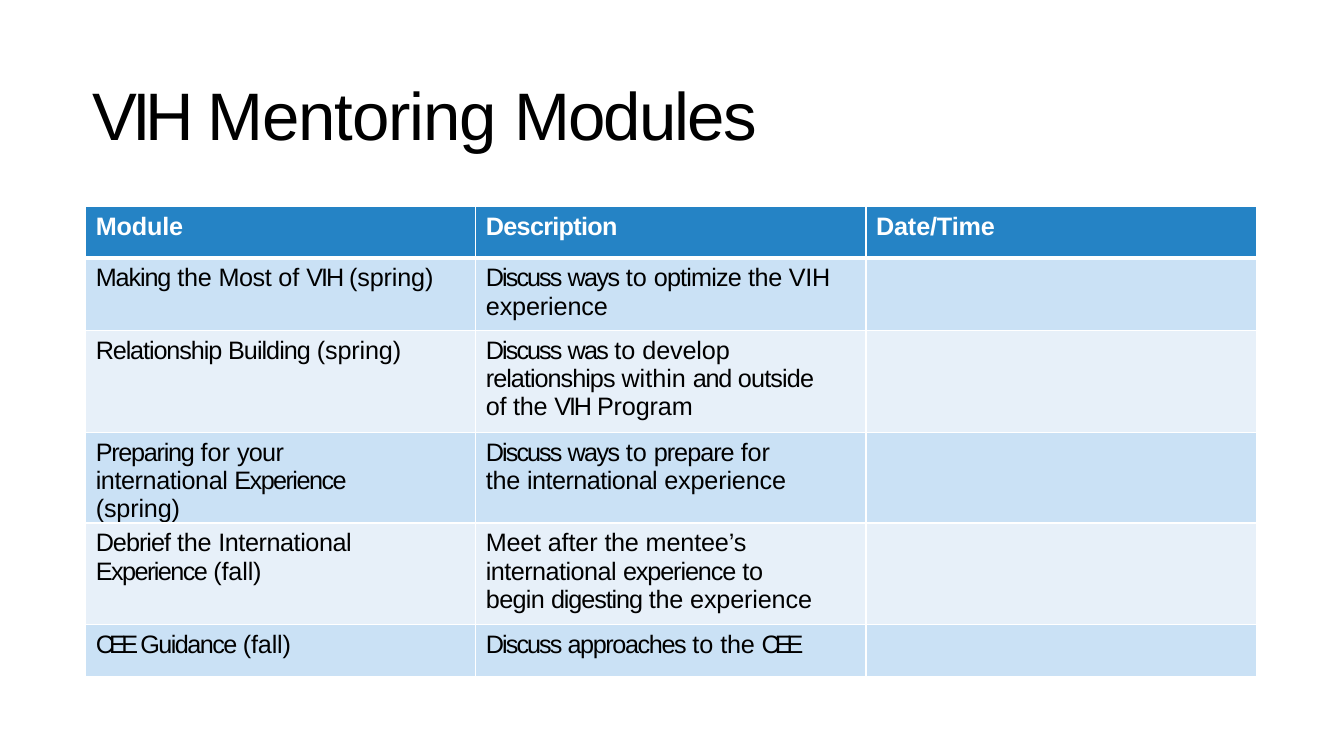
"""Build the mentoring modules slide: a title above a three-column table."""
from dataclasses import dataclass

from lxml import etree
from pptx import Presentation
from pptx import util as u
from pptx.dml.color import RGBColor
from pptx.enum import text as t
from pptx.oxml import ns

TITLE = [("VIH ", -3.7), ("Mentoring ", -0.9), ("Modules", -1.3)]
HEADINGS = [[("Module", -0.1)], [("Description", -0.5)], [("Date/Time", -0.1)]]
MODULES = [
    [[("Making ", -0.8), ("the ", -0.2), ("Most ", -0.3), ("of ", 0),
      ("VIH ", -1.5), ("(spring)", -0.1)],
     [("Discuss ", -1.4), ("ways ", -1.1), ("to ", 0), ("optimize ", -0.6),
      ("the VIH ", -0.2), ("experience", -0.1)], []],
    [[("Relationship ", -0.8), ("Building ", -0.7), ("(spring)", -0.1)],
     [("Discuss ", -1.4), ("was ", -1.2), ("to ", 0), ("develop ", -0.1),
      ("relationships ", -0.7), ("within ", 0), ("and ", -1), ("outside ", -0.6),
      ("of the ", -0.2), ("VIH ", -1.5), ("Program", -0.1)], []],
    [[("Preparing ", -0.9), ("for ", 0), ("your ", -0.5), ("international ", -0.3),
      ("Experience ", -1.1), ("(spring)", -0.1)],
     [("Discuss ", -1.4), ("ways ", -1.1), ("to ", 0), ("prepare ", -0.7),
      ("for ", 0), ("the ", -0.2), ("international ", -0.4),
      ("experience", -0.1)], []],
    [[("Debrief ", -0.7), ("the ", -0.2), ("International ", -0.3),
      ("Experience ", -1.1), ("(fall)", -0.1)],
     [("Meet ", -0.2), ("after ", -0.1), ("the ", -0.2), ("mentee’s ", -0.1),
      ("international ", -0.4), ("experience ", -0.8), ("to ", 0), ("begin ", -0.5),
      ("digesting ", -0.8), ("the ", -0.2), ("experience", -0.1)], []],
    [[("CEE ", -3.4), ("Guidance ", -1.1), ("(fall)", -0.1)],
     [("Discuss ", -1.4), ("approaches ", -1), ("to ", 0), ("the ", -0.2),
      ("CEE", -3.6)], []],
]
ROW_HEIGHTS = [0.51, 0.72, 1.01, 0.72, 1.01, 0.51]
COLUMN_WIDTH = 3.87
RIGHT_MARGINS = {(2, 1): 0.4, (3, 0): 0.9, (3, 1): 0.65, (4, 0): 0.5, (4, 1): 0.47}


@dataclass(frozen=True)
class Theme:
    """Colours, font and type sizes of the slide."""
    font: str = "Arial"
    title_size: float = 48
    body_size: float = 18
    ink: str = "000000"
    white: str = "FFFFFF"
    header: str = "2583C5"
    bands: tuple = ("E7F0F9", "CAE1F5")
    rule: float = 1
    header_rule: float = 3


THEME = Theme()


def write(frame, runs, size=THEME.body_size, color=THEME.ink, bold=False):
    """Write letter-spaced runs into the first paragraph of a frame."""
    paragraph = frame.paragraphs[0]
    paragraph.alignment = t.PP_ALIGN.LEFT
    paragraph.line_spacing = 1.0
    paragraph.space_before = u.Pt(0)
    paragraph.font.size = u.Pt(size)
    for words, spacing in runs:
        run = paragraph.add_run()
        run.text = words
        run.font.name = THEME.font
        run.font.size = u.Pt(size)
        run.font.bold = bold
        run.font.color.rgb = RGBColor.from_string(color)
        run._r.get_or_add_rPr().set("spc", str(round(spacing * 100)))


def add_borders(cell, widths):
    """Draw white borders, given left, right, top and bottom widths."""
    properties = cell._tc.get_or_add_tcPr()
    for position, (side, width) in enumerate(zip("LRTB", widths)):
        line = etree.Element(ns.qn(f"a:ln{side}"), w=str(u.Pt(width)))
        fill = etree.SubElement(line, ns.qn("a:solidFill"))
        etree.SubElement(fill, ns.qn("a:srgbClr"), val=THEME.white)
        properties.insert(position, line)


def add_title(slide):
    """Place and fill the title placeholder."""
    title = slide.shapes.title
    title.left, title.top, title.width, title.height = map(
        u.Inches, (0.92, 0.71, 11.5, 0.82))
    frame = title.text_frame
    frame.margin_left = frame.margin_right = frame.margin_bottom = 0
    frame.margin_top = u.Inches(0.02)
    frame.vertical_anchor = t.MSO_ANCHOR.MIDDLE
    frame.auto_size = t.MSO_AUTO_SIZE.NONE
    frame.word_wrap = True
    write(frame, TITLE, size=THEME.title_size)


def add_modules(slide):
    """Add the table of modules."""
    rows = [HEADINGS, *MODULES]
    columns = len(HEADINGS)
    table = slide.shapes.add_table(
        len(rows), columns, u.Inches(0.85), u.Inches(2.05),
        u.Inches(COLUMN_WIDTH * columns), u.Inches(sum(ROW_HEIGHTS))).table
    for column in table.columns:
        column.width = u.Inches(COLUMN_WIDTH)
    for r, contents in enumerate(rows):
        table.rows[r].height = u.Inches(ROW_HEIGHTS[r])
        is_header = r == 0
        top = THEME.header_rule if r == 1 else THEME.rule
        bottom = THEME.header_rule if is_header else THEME.rule
        for c, runs in enumerate(contents):
            cell = table.cell(r, c)
            cell.margin_left = u.Inches(0.1)
            cell.margin_top = u.Inches(0.06)
            cell.margin_right = u.Inches(RIGHT_MARGINS.get((r, c), 0))
            cell.margin_bottom = 0
            cell.fill.solid()
            cell.fill.fore_color.rgb = RGBColor.from_string(
                THEME.header if is_header else THEME.bands[r % 2])
            add_borders(cell, (THEME.rule, THEME.rule, top, bottom))
            write(cell.text_frame, runs, bold=is_header,
                  color=THEME.white if is_header else THEME.ink)


def main():
    """Create and save the presentation."""
    presentation = Presentation()
    presentation.slide_width = u.Inches(13.33)
    presentation.slide_height = u.Inches(7.5)
    slide = presentation.slides.add_slide(presentation.slide_layouts[5])
    add_title(slide)
    add_modules(slide)
    presentation.save("out.pptx")


if __name__ == "__main__":
    main()
